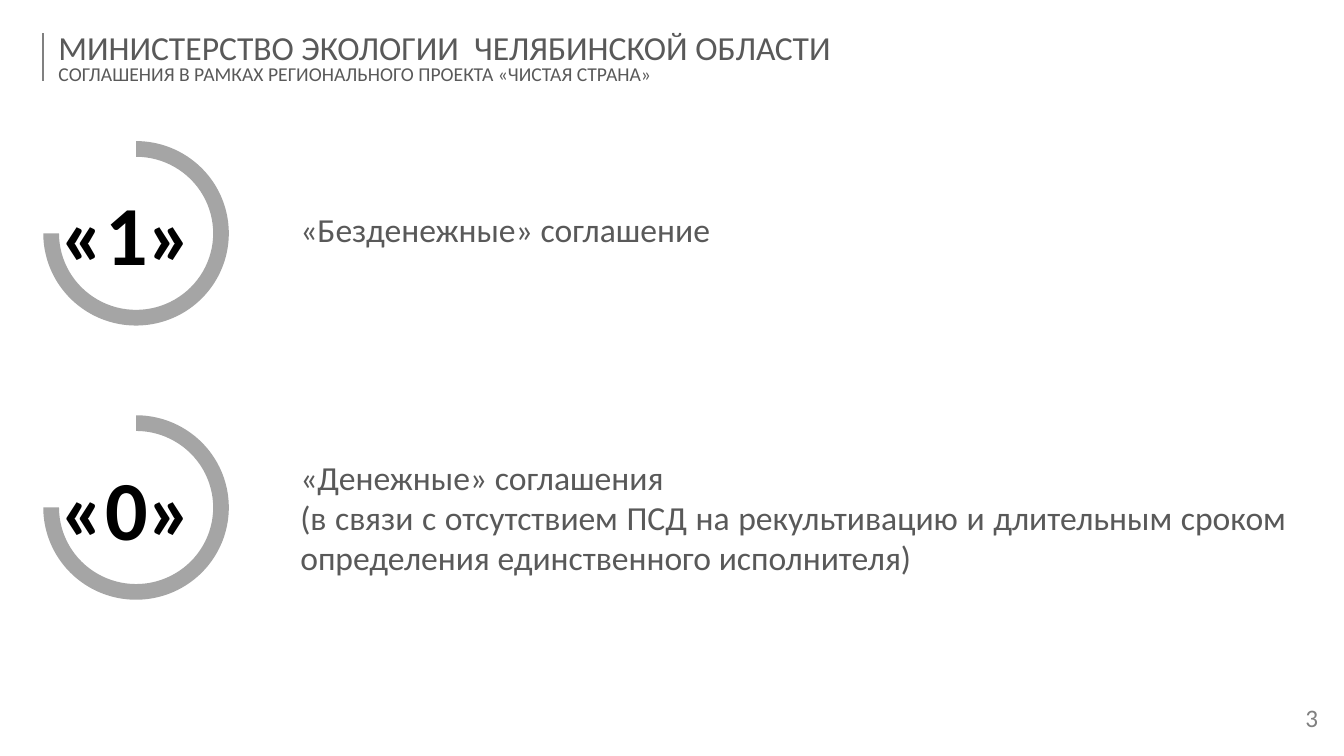
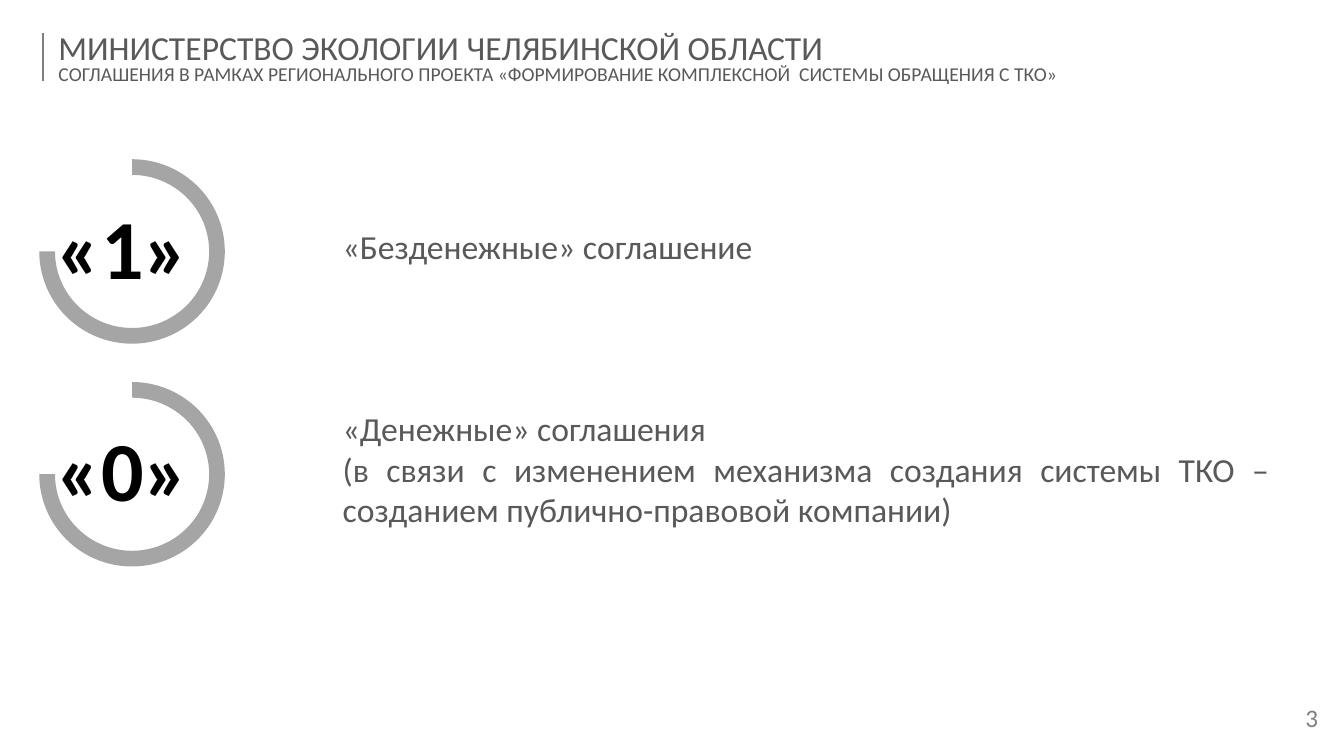
from pptx import Presentation
from pptx.dml.color import RGBColor
from pptx.enum.shapes import MSO_CONNECTOR, MSO_SHAPE
from pptx.enum.text import MSO_ANCHOR, PP_ALIGN
from pptx.oxml.xmlchemy import OxmlElement
from pptx.util import Inches, Pt

ARC = MSO_SHAPE.BLOCK_ARC
LINE = MSO_CONNECTOR.STRAIGHT
TOP, MID = MSO_ANCHOR.TOP, MSO_ANCHOR.MIDDLE
LEFT, CENTER, FULL = PP_ALIGN.LEFT, PP_ALIGN.CENTER, PP_ALIGN.JUSTIFY

BLACK = RGBColor(0x00, 0x00, 0x00)
DARK = RGBColor(0x59, 0x59, 0x59)
GREY = RGBColor(0x80, 0x80, 0x80)
SILVER = RGBColor(0xA5, 0xA5, 0xA5)
FONT = "Calibri"

HEAD = {"anchor": MID, "para": {"alignment": LEFT, "line_spacing": 0.8},
        "font": {"name": FONT}, "color": DARK}
PAGE = {"anchor": MID, "para": {"alignment": CENTER, "line_spacing": 0.8},
        "font": {"name": FONT}, "color": GREY}
COUNT = {"anchor": MID, "para": {"alignment": CENTER},
         "font": {"name": FONT, "bold": True}, "color": BLACK}
LABEL = {"anchor": TOP, "para": {"alignment": FULL},
         "font": {"name": FONT}, "color": DARK}

SLIDES = [
    {"title": "МИНИСТЕРСТВО ЭКОЛОГИИ  ЧЕЛЯБИНСКОЙ ОБЛАСТИ",
     "topic": "СОГЛАШЕНИЯ В РАМКАХ РЕГИОНАЛЬНОГО ПРОЕКТА «ЧИСТАЯ СТРАНА»",
     "left": 0.43, "drop": 0.35, "text": 2.88, "width": 9.98,
     "rows": [
         (1.4, 2.02, "«1» ", ["«Безденежные» соглашение"]),
         (4.12, 4.48, "«0» ", [
             "«Денежные» соглашения",
             "(в связи с отсутствием ПСД на рекультивацию и длительным сроком "
             "определения единственного исполнителя)"])]},
    {"title": "МИНИСТЕРСТВО ЭКОЛОГИИ ЧЕЛЯБИНСКОЙ ОБЛАСТИ",
     "topic": "СОГЛАШЕНИЯ В РАМКАХ РЕГИОНАЛЬНОГО ПРОЕКТА "
              "«ФОРМИРОВАНИЕ КОМПЛЕКСНОЙ  СИСТЕМЫ ОБРАЩЕНИЯ С ТКО»",
     "left": 0.39, "drop": 0.3, "text": 3.3, "width": 9.39,
     "rows": [
         (1.58, 2.19, "«1» ", ["«Безденежные» соглашение"]),
         (3.79, 4.0, "«0» ", [
             "«Денежные» соглашения",
             "(в связи с изменением механизма создания системы ТКО – "
             "созданием публично-правовой компании)"])]},
]


def apply(item, values):
    for key, value in values.items():
        setattr(item, key, value)


def write(slide, box, lines, style):
    frame = slide.shapes.add_textbox(*map(Inches, box)).text_frame
    apply(frame, {"word_wrap": True, "vertical_anchor": style["anchor"]})
    for i, (words, size) in enumerate(lines):
        para = frame.add_paragraph() if i else frame.paragraphs[0]
        apply(para, style["para"])
        run = para.add_run()
        run.text = words
        apply(run.font, style["font"] | {"size": Pt(size)})
        run.font.color.rgb = style["color"]


deck = Presentation()
apply(deck, {"slide_width": Inches(13.33), "slide_height": Inches(7.5)})

for data in SLIDES:
    slide = deck.slides.add_slide(deck.slide_layouts[6])
    bar = slide.shapes.add_connector(
        LINE, Inches(0.43), Inches(0.33), Inches(0.43), Inches(0.8))
    bar.line.color.rgb = GREY
    bar.line.width = Pt(1.5)
    bar._element.spPr.append(OxmlElement("a:effectLst"))
    write(slide, (12.43, 6.9, 1.16, 0.5), [("3", 18)], PAGE)
    write(slide, (0.48, 0.26, 12.85, 0.67),
          [(data["title"], 24), (data["topic"], 14)], HEAD)

    left = data["left"]
    for top, high, count, lines in data["rows"]:
        write(slide, (left - 0.31, top + data["drop"], 2.46, 1.11),
              [(count, 60)], COUNT)
        ring = slide.shapes.add_shape(
            ARC, Inches(left), Inches(top), Inches(1.84), Inches(1.83))
        for i, value in enumerate((162, 108, 0.085)):
            ring.adjustments[i] = value
        ring.shadow.inherit = False
        ring.fill.solid()
        ring.fill.fore_color.rgb = SILVER
        ring.line.fill.background()
        write(slide, (data["text"], high, data["width"], 0.1 + 0.4 * len(lines)),
              [(words, 24) for words in lines], LABEL)

deck.save("out.pptx")
